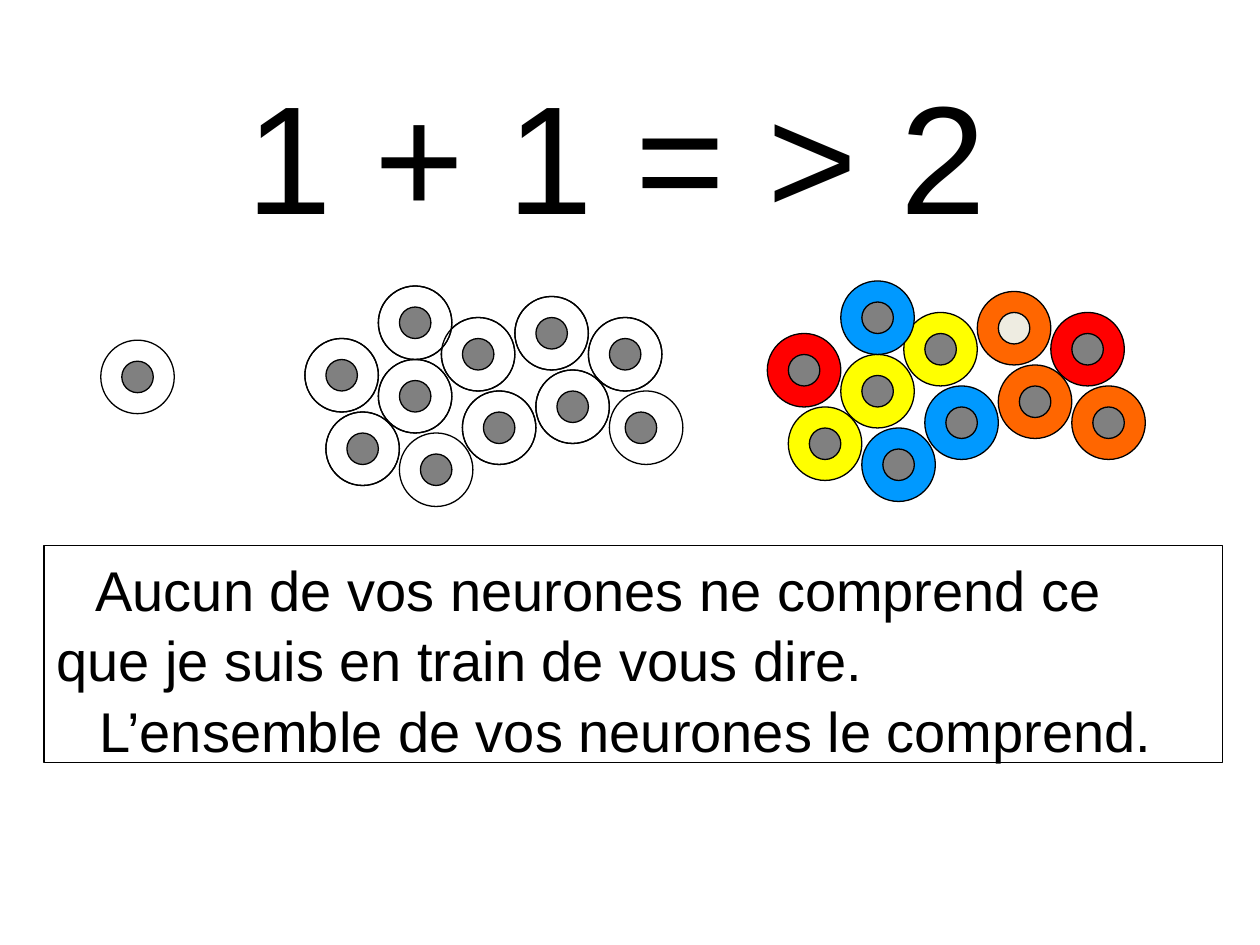
"""Build the slide showing that an ensemble of neurons exceeds the sum of its parts."""
import pptx
import pptx.util
import pptx.dml.color
import pptx.enum.shapes
import pptx.enum.text

Inches = pptx.util.Inches
RGBColor = pptx.dml.color.RGBColor
OVAL = pptx.enum.shapes.MSO_SHAPE.OVAL
ALIGN = pptx.enum.text.PP_ALIGN

BLACK = RGBColor(0x00, 0x00, 0x00)
WHITE = RGBColor(0xFF, 0xFF, 0xFF)
GREY = RGBColor(0x80, 0x80, 0x80)
CREAM = RGBColor(0xEE, 0xEC, 0xE1)
RED = RGBColor(0xFF, 0x00, 0x00)
YELLOW = RGBColor(0xFF, 0xFF, 0x00)
BLUE = RGBColor(0x00, 0x99, 0xFF)
ORANGE = RGBColor(0xFF, 0x66, 0x00)

UNIT = Inches(1) / 12
BODY, NUCLEUS, INSET = 7, 3, 2
CELLS = [
    (0, 5, RED), (27, 3, RED),
    (13, 3, YELLOW), (2, 12, YELLOW), (7, 7, YELLOW),
    (7, 0, BLUE), (9, 14, BLUE), (15, 10, BLUE),
    (20, 1, ORANGE), (22, 8, ORANGE), (29, 10, ORANGE),
]


def write(p, text, size, align=ALIGN.LEFT, indent=0, spacing=1.0):
    p.alignment = align
    p.line_spacing = spacing
    p._p.get_or_add_pPr().set("indent", str(Inches(indent)))
    r = p.add_run()
    r.text = text
    r.font.name = "Arial"
    r.font.size = pptx.util.Pt(size)
    r.font.color.rgb = BLACK


def add_outlined(shapes, kind, left, top, width, height, fill=None):
    sp = shapes.add_shape(kind, int(left), int(top), int(width), int(height))
    sp.shadow.inherit = False
    if fill is None:
        sp.fill.background()
    else:
        sp.fill.solid()
        sp.fill.fore_color.rgb = fill
    sp.line.color.rgb = BLACK
    sp.line.width = pptx.util.Pt(0.75)
    return sp


prs = pptx.Presentation()
prs.slide_width, prs.slide_height = Inches(10), Inches(7.5)
s = prs.slides.add_slide(prs.slide_layouts[5])

title = s.shapes.title
title.left, title.top = Inches(0.36), Inches(0.31)
title.width, title.height = Inches(9.07), Inches(1.88)
tf = title.text_frame
tf.auto_size = pptx.enum.text.MSO_AUTO_SIZE.NONE
tf.vertical_anchor = pptx.enum.text.MSO_ANCHOR.TOP
tf.margin_top = Inches(0.17)
write(tf.paragraphs[0], "1 + 1 = > 2", 88, align=ALIGN.CENTER)

box = add_outlined(s.shapes, pptx.enum.shapes.MSO_SHAPE.RECTANGLE,
                   Inches(0.35), Inches(4.33), Inches(9.35), Inches(1.72), WHITE)
tf = box.text_frame
tf.word_wrap = True
tf.vertical_anchor = pptx.enum.text.MSO_ANCHOR.TOP
write(tf.paragraphs[0],
      "Aucun de vos neurones ne comprend ce que je suis en train de vous dire.",
      32, indent=0.31, spacing=1.05)
write(tf.add_paragraph(), "L’ensemble de vos neurones le comprend.",
      32, indent=0.34, spacing=1.05)

coloured = s.shapes.add_group_shape().shapes
for col, row, colour in CELLS:
    x, y = Inches(6.09) + col * UNIT, Inches(2.23) + row * UNIT
    core = CREAM if (col, row) == (20, 1) else GREY
    add_outlined(coloured, OVAL, x, y, BODY * UNIT, BODY * UNIT, colour)
    add_outlined(coloured, OVAL, x + INSET * UNIT, y + INSET * UNIT,
                 NUCLEUS * UNIT, NUCLEUS * UNIT, core)

single = s.shapes.add_group_shape().shapes
add_outlined(single, OVAL, Inches(0.8), Inches(2.7), BODY * UNIT, BODY * UNIT, WHITE)
add_outlined(single, OVAL, Inches(0.8) + INSET * UNIT, Inches(2.7) + INSET * UNIT,
             NUCLEUS * UNIT, NUCLEUS * UNIT, GREY)

plain = s.shapes.add_group_shape().shapes
for fill in (WHITE, None):
    for col, row, colour in CELLS:
        if fill is WHITE or (col, row) not in ((9, 14), (29, 10)):
            add_outlined(plain, OVAL, Inches(2.42) + col * UNIT, Inches(2.27) + row * UNIT,
                         BODY * UNIT, BODY * UNIT, fill)
for col, row, colour in CELLS:
    inset = 1.5 if (col, row) == (29, 10) else INSET
    add_outlined(plain, OVAL, Inches(2.42) + (col + inset) * UNIT,
                 Inches(2.27) + (row + INSET) * UNIT,
                 NUCLEUS * UNIT, NUCLEUS * UNIT, GREY)

prs.save("out.pptx")
